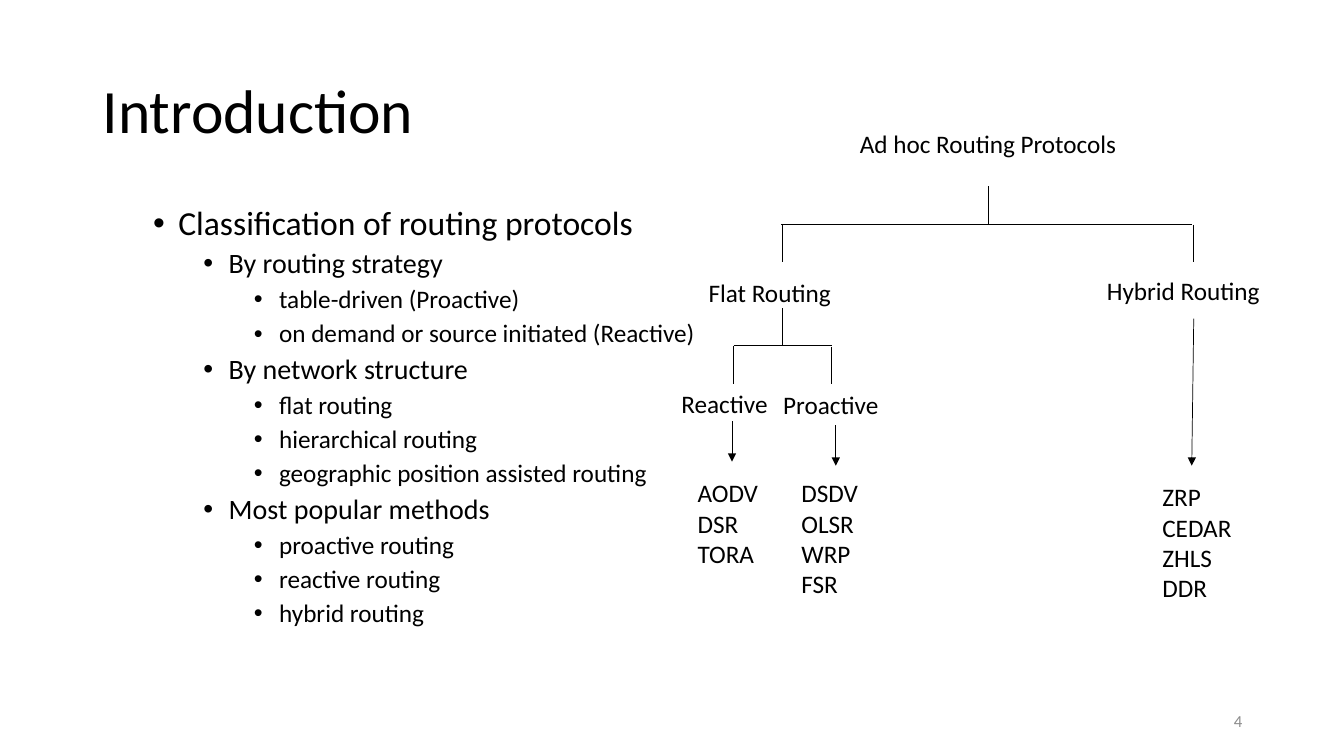
from lxml import etree
from pptx import Presentation
from pptx.dml.color import RGBColor
from pptx.enum.shapes import MSO_CONNECTOR, MSO_SHAPE
from pptx.enum.text import MSO_ANCHOR, PP_ALIGN
from pptx.oxml.ns import qn
from pptx.util import Inches, Pt

LEFT, CENTER, RIGHT = PP_ALIGN.LEFT, PP_ALIGN.CENTER, PP_ALIGN.RIGHT
TOP, MIDDLE = MSO_ANCHOR.TOP, MSO_ANCHOR.MIDDLE
STRAIGHT = MSO_CONNECTOR.STRAIGHT
RECTANGLE = MSO_SHAPE.RECTANGLE

COLORS = {"text": "000000", "box": "FFFFFF", "number": "8C8C8C"}
FONT = "Calibri"
BODY_SIZES = {1: 24, 2: 20, 3: 18}


def write(sp, lines, size=18, color="text", align=LEFT, anchor=TOP):
    """Fill a shape with one paragraph per line and return its paragraphs."""
    tf = sp.text_frame
    tf.word_wrap = True
    tf.vertical_anchor = anchor
    tf.text = "\n".join(lines)
    for p in tf.paragraphs:
        p.alignment = align
        p.font.size = Pt(size)
        p.font.name = FONT
        p.font.color.rgb = RGBColor.from_string(COLORS[color])
    return tf.paragraphs


def add_line(x1, y1, x2, y2, arrow=False):
    line = s.shapes.add_connector(STRAIGHT, Inches(x1), Inches(y1), Inches(x2), Inches(y2))
    line.line.width = Pt(0.5)
    line.line.color.rgb = RGBColor.from_string(COLORS["text"])
    if arrow:
        etree.SubElement(line.line._get_or_add_ln(), qn("a:tailEnd"), type="triangle")
    etree.SubElement(line._element.spPr, qn("a:effectLst"))


prs = Presentation()
prs.slide_width, prs.slide_height = Inches(13.33), Inches(7.5)
s = prs.slides.add_slide(prs.slide_layouts[6])

# Title and slide number
title = s.shapes.add_textbox(Inches(0.92), Inches(0.4), Inches(11.5), Inches(1.45))
write(title, ["Introduction"], size=44, anchor=MIDDLE)[0].line_spacing = 0.9
number = s.shapes.add_textbox(Inches(9.42), Inches(6.95), Inches(3), Inches(0.4))
write(number, ["4"], size=12, color="number", align=RIGHT, anchor=MIDDLE)

# Bulleted outline
outline = [
    (1, "Classification of routing protocols"),
    (2, "By routing strategy"),
    (3, "table-driven (Proactive)"),
    (3, "on demand or source initiated (Reactive)"),
    (2, "By network structure"),
    (3, "flat routing"),
    (3, "hierarchical routing"),
    (3, "geographic position assisted routing"),
    (2, "Most popular methods"),
    (3, "proactive routing"),
    (3, "reactive routing"),
    (3, "hybrid routing"),
]
body = s.shapes.add_textbox(Inches(0.92), Inches(2), Inches(11.5), Inches(4.76))
paragraphs = write(body, [text for _, text in outline])
for p, (level, _) in zip(paragraphs, outline):
    p.level = level
    p.font.size = Pt(BODY_SIZES[level])
    p.line_spacing = 0.9
    p.space_before = Pt(5)
    pPr = p._p.get_or_add_pPr()
    pPr.set("marL", str(Inches(0.25 + 0.5 * level)))
    pPr.set("indent", str(Inches(-0.25)))
    defaults = pPr.find(qn("a:defRPr"))
    defaults.addprevious(etree.Element(qn("a:buFont"), typeface="Arial"))
    defaults.addprevious(etree.Element(qn("a:buChar"), char="•"))

# Root of the protocol tree
root = s.shapes.add_shape(RECTANGLE, Inches(8.37), Inches(0.99), Inches(2.86), Inches(0.86))
root.shadow.inherit = False
root.fill.solid()
root.fill.fore_color.rgb = RGBColor.from_string(COLORS["box"])
root.line.fill.background()
write(root, ["Ad hoc Routing Protocols"], align=CENTER, anchor=MIDDLE)

# Branches: stem, crossbar and two drops for each fork
for x1, y1, x2, y2 in [
    (9.8, 1.85, 9.8, 2.23),
    (7.75, 2.23, 11.82, 2.23),
    (7.76, 2.23, 7.76, 2.6),
    (11.84, 2.23, 11.84, 2.6),
    (7.76, 3.06, 7.76, 3.43),
    (7.28, 3.43, 8.25, 3.43),
    (7.27, 3.43, 7.27, 3.81),
    (8.25, 3.44, 8.25, 3.81),
]:
    add_line(x1, y1, x2, y2)

# Arrows down to the protocol lists
for x1, y1, x2, y2 in [
    (7.26, 4.18, 7.26, 4.58),
    (8.29, 4.22, 8.29, 4.62),
    (11.84, 3.16, 11.82, 4.62),
]:
    add_line(x1, y1, x2, y2, arrow=True)

# Routing classes and their protocols
for x, y, width, lines in [
    (6.93, 2.7, 1.54, ["Flat Routing"]),
    (10.88, 2.68, 1.87, ["Hybrid Routing"]),
    (6.66, 3.8, 1.08, ["Reactive"]),
    (7.67, 3.81, 1.16, ["Proactive"]),
    (6.82, 4.69, 0.88, ["AODV", "DSR", "TORA"]),
    (7.85, 4.69, 0.88, ["DSDV", "OLSR", "WRP", "FSR"]),
    (11.43, 4.73, 1.04, ["ZRP", "CEDAR", "ZHLS", "DDR"]),
]:
    height = 0.1 + 0.3 * len(lines)
    label = s.shapes.add_textbox(Inches(x), Inches(y), Inches(width), Inches(height))
    write(label, lines)

prs.save("out.pptx")
